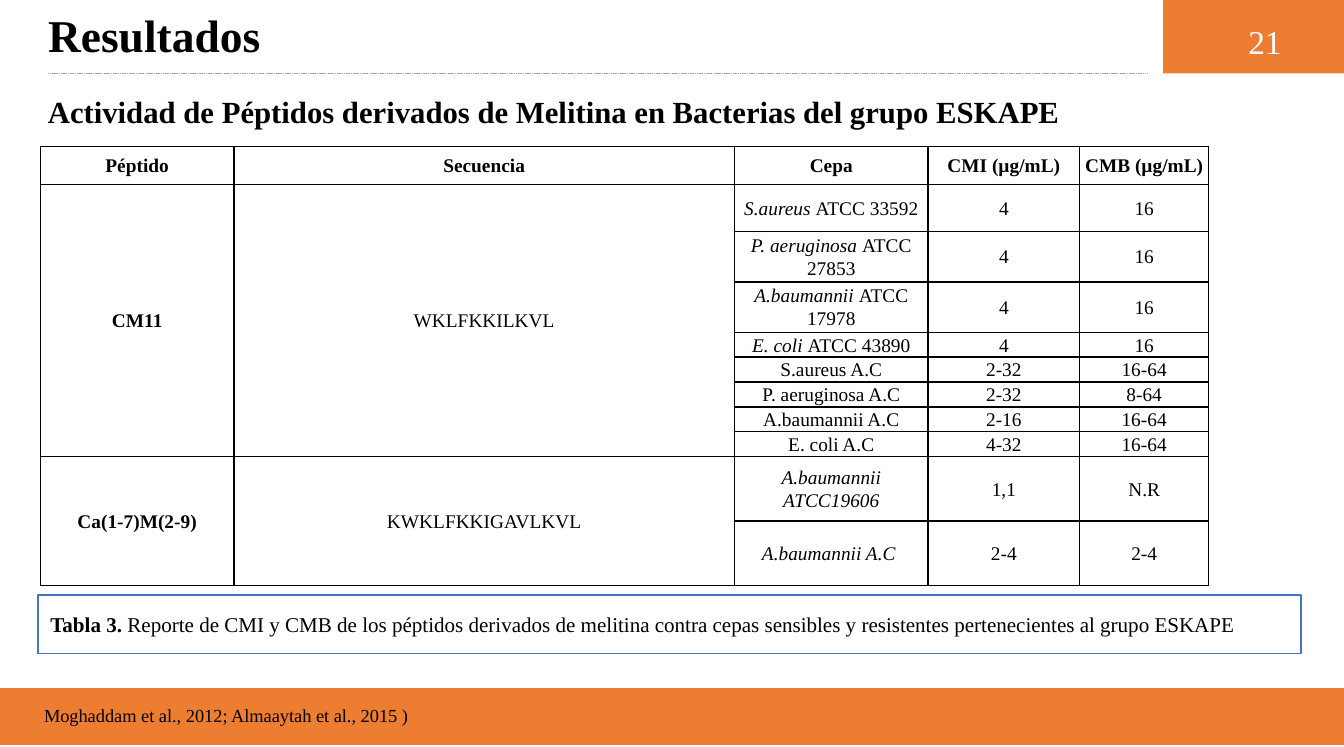
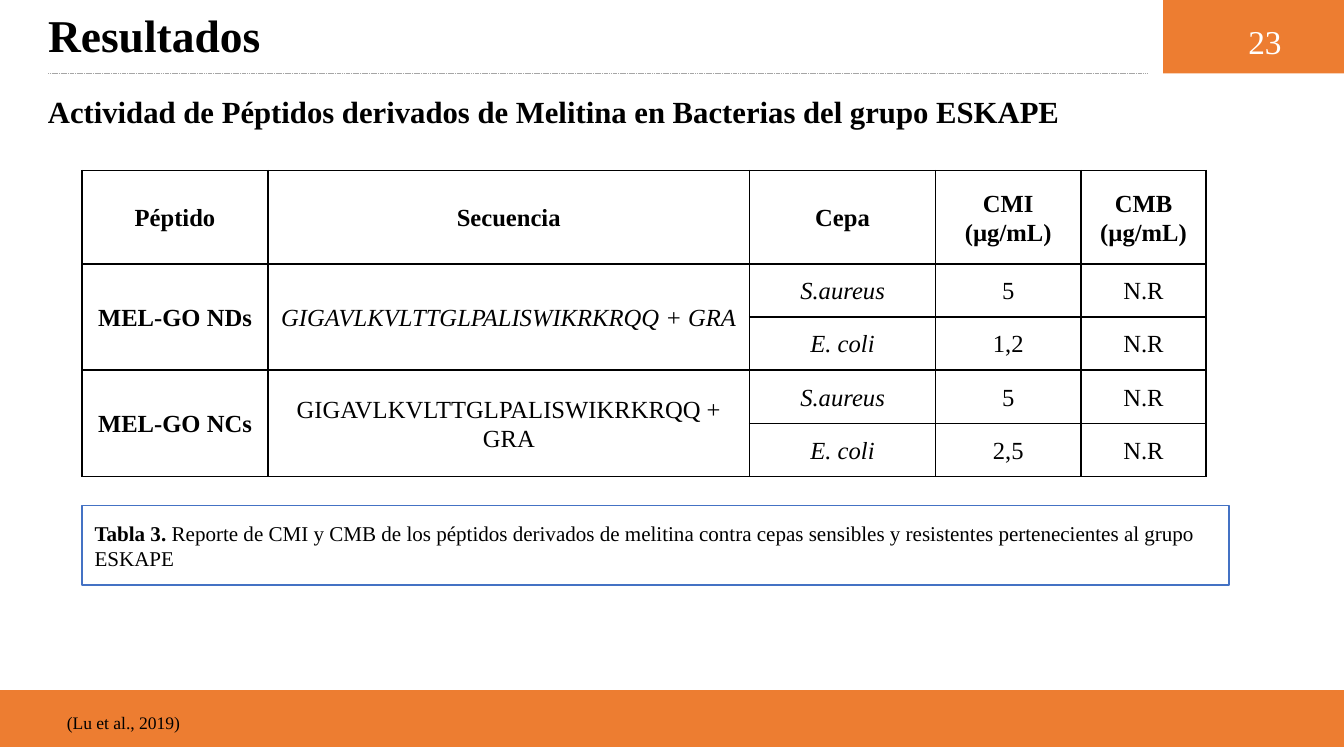
from dataclasses import dataclass
from typing import NamedTuple

from lxml.etree import SubElement
from pptx import Presentation
from pptx.dml.color import RGBColor
from pptx.enum.dml import MSO_LINE
from pptx.enum.shapes import MSO_CONNECTOR, MSO_SHAPE
from pptx.enum.text import MSO_ANCHOR, MSO_AUTO_SIZE, PP_ALIGN
from pptx.oxml.ns import qn
from pptx.util import Inches, Pt

FONT = "Times New Roman"
BLACK, WHITE, ORANGE, BLUE, GRAY = "000000", "FFFFFF", "ED7D31", "4472C4", "A6A6A6"
SLIDE_WIDTH, SLIDE_HEIGHT, BAND_HEIGHT = 10.63, 5.91, 0.44
HEADER_HEIGHT = 0.58
TITLE = "Resultados"
SUBTITLE = "Actividad de Péptidos derivados de Melitina en Bacterias del grupo ESKAPE"
HEADINGS = ("Péptido", "Secuencia", "Cepa", "CMI (µg/mL)", "CMB (µg/mL)")
CAPTION_LABEL = "Tabla 3."
CAPTION = (" Reporte de CMI y CMB de los péptidos derivados de melitina contra cepas "
           "sensibles y resistentes pertenecientes al grupo ESKAPE")


class Box(NamedTuple):
    """Left, top, width and height in inches."""
    left: float
    top: float
    width: float
    height: float

    def lengths(self):
        """Return the four values as lengths."""
        return tuple(Inches(value) for value in self)


class Run(NamedTuple):
    """A piece of text with one style."""
    text: str
    bold: bool = False
    italic: bool = False


class Strain(NamedTuple):
    """A strain, with italics between asterisks, and its concentrations."""
    name: str
    cmi: str
    cmb: str


@dataclass
class Peptide:
    """A peptide and the strains it was tested on."""
    name: str
    sequence: str
    strains: list[Strain]
    inset: float


@dataclass
class ResultTable:
    """Layout and content of a table of results."""
    left: float
    top: float
    columns: list[float]
    rows: list[float]
    size: float
    peptides: list[Peptide]


@dataclass
class ResultSlide:
    """Everything that differs between the slides."""
    number: int
    table: ResultTable
    caption: Box
    band_top: float
    citation: str
    citation_box: Box
    citation_size: float


def color(value: str) -> RGBColor:
    """Turn a hex string into a colour."""
    return RGBColor.from_string(value)


def italic_runs(text: str, bold: bool = False) -> list[Run]:
    """Split text into runs, with italics between asterisks."""
    return [Run(part, bold, index % 2 == 1)
            for index, part in enumerate(text.split("*")) if part]


def write(paragraph, runs: list[Run], size: float, font_color: str = BLACK) -> None:
    """Fill a paragraph with styled runs."""
    for item in runs:
        run = paragraph.add_run()
        run.text = item.text
        run.font.name = FONT
        run.font.size = Pt(size)
        run.font.bold = item.bold
        run.font.italic = item.italic
        run.font.color.rgb = color(font_color)


def add_text(slide, box: Box, runs: list[Run], size: float, font_color: str = BLACK):
    """Add a wrapped text box and return it."""
    shape = slide.shapes.add_textbox(*box.lengths())
    shape.text_frame.word_wrap = True
    write(shape.text_frame.paragraphs[0], runs, size, font_color)
    return shape


def add_panel(slide, box: Box, fill: str, line: str | None = None,
              preset: MSO_SHAPE = MSO_SHAPE.RECTANGLE):
    """Add a filled shape, outlined if a line colour is given."""
    shape = slide.shapes.add_shape(preset, *box.lengths())
    shape.shadow.inherit = False
    shape.fill.solid()
    shape.fill.fore_color.rgb = color(fill)
    if line:
        shape.line.color.rgb = color(line)
        shape.line.width = Pt(1)
    else:
        shape.line.fill.background()
    return shape


def add_header(slide, number: int) -> None:
    """Add the rule, number block, title and subtitle."""
    rule = slide.shapes.add_connector(
        MSO_CONNECTOR.STRAIGHT, Inches(0.38), Inches(HEADER_HEIGHT),
        Inches(9.08), Inches(HEADER_HEIGHT))
    rule.line.color.rgb = color(GRAY)
    rule.line.width = Pt(0.25)
    rule.line.dash_style = MSO_LINE.SQUARE_DOT
    SubElement(rule._element.spPr, qn("a:effectLst"))
    add_panel(slide, Box(9.2, 0, 1.43, HEADER_HEIGHT), ORANGE)

    title = slide.shapes.title
    title.left, title.top, title.width, title.height = Box(0.28, 0.09, 8.49, 0.45).lengths()
    title.text_frame.word_wrap = True
    title.text_frame.auto_size = MSO_AUTO_SIZE.NONE
    write(title.text_frame.paragraphs[0], [Run(TITLE, bold=True)], 25.9)
    subtitle = add_text(slide, Box(0.28, 0.69, 8.49, 0.45), [Run(SUBTITLE, bold=True)], 17.5)
    for shape, spacing in ((title, 0.8), (subtitle, 0.7)):
        shape.text_frame.vertical_anchor = MSO_ANCHOR.MIDDLE
        shape.text_frame.paragraphs[0].alignment = PP_ALIGN.LEFT
        shape.text_frame.paragraphs[0].line_spacing = spacing

    number_box = add_text(slide, Box(9.73, 0.12, 0.55, 0.42), [Run(str(number))], 19, WHITE)
    number_box.text_frame.paragraphs[0].alignment = PP_ALIGN.CENTER


def add_caption(slide, box: Box) -> None:
    """Add the outlined table caption."""
    caption = add_panel(slide, box, WHITE, BLUE, MSO_SHAPE.ROUNDED_RECTANGLE)
    caption.adjustments[0] = 0
    caption.text_frame.word_wrap = True
    caption.text_frame.vertical_anchor = MSO_ANCHOR.MIDDLE
    paragraph = caption.text_frame.paragraphs[0]
    paragraph.alignment = PP_ALIGN.LEFT
    write(paragraph, [Run(CAPTION_LABEL, bold=True), Run(CAPTION)], 12)


def style_cell(cell) -> None:
    """Give a cell black borders and a white fill."""
    properties = cell._tc.get_or_add_tcPr()
    for side in ("a:lnL", "a:lnR", "a:lnT", "a:lnB"):
        border = SubElement(properties, qn(side), w=str(Pt(1)))
        fill = SubElement(border, qn("a:solidFill"))
        SubElement(fill, qn("a:srgbClr"), val=BLACK)
    cell.fill.solid()
    cell.fill.fore_color.rgb = color(WHITE)


def fill_cell(cell, text: str, size: float, inset: float, bold: bool = False) -> None:
    """Write centred text into a cell."""
    cell.vertical_anchor = MSO_ANCHOR.MIDDLE
    cell.margin_left = cell.margin_right = Inches(inset)
    cell.margin_top = cell.margin_bottom = 0
    paragraph = cell.text_frame.paragraphs[0]
    paragraph.alignment = PP_ALIGN.CENTER
    paragraph.line_spacing = 1.07
    paragraph.space_after = Pt(8)
    write(paragraph, italic_runs(text, bold), size)


def add_results(slide, results: ResultTable) -> None:
    """Add the table, merging the cells of each peptide."""
    box = Box(results.left, results.top, sum(results.columns), sum(results.rows))
    table = slide.shapes.add_table(
        len(results.rows), len(results.columns), *box.lengths()).table
    table.first_row = table.horz_banding = False
    for column, width in zip(table.columns, results.columns):
        column.width = Inches(width)
    for row, height in zip(table.rows, results.rows):
        row.height = Inches(height)
    for cell in table.iter_cells():
        style_cell(cell)

    for column, heading in enumerate(HEADINGS):
        fill_cell(table.cell(0, column), heading, results.size,
                  results.peptides[0].inset, bold=True)
    first = 1
    for peptide in results.peptides:
        last = first + len(peptide.strains) - 1
        for column, text in enumerate((peptide.name, peptide.sequence)):
            table.cell(first, column).merge(table.cell(last, column))
            fill_cell(table.cell(first, column), text, results.size,
                      peptide.inset, bold=column == 0)
        for row, strain in enumerate(peptide.strains, first):
            for column, text in enumerate(strain, 2):
                fill_cell(table.cell(row, column), text, results.size, peptide.inset)
        first = last + 1


def add_result_slide(presentation, content: ResultSlide) -> None:
    """Build one slide of results."""
    slide = presentation.slides.add_slide(presentation.slide_layouts[5])
    add_header(slide, content.number)
    add_caption(slide, content.caption)
    add_results(slide, content.table)
    add_panel(slide, Box(0, content.band_top, SLIDE_WIDTH, BAND_HEIGHT), ORANGE, ORANGE)
    add_text(slide, content.citation_box, [Run(content.citation)], content.citation_size)


SLIDES = [
    ResultSlide(
        number=21,
        table=ResultTable(
            left=0.32, top=1.16, columns=[1.53, 3.96, 1.53, 1.2, 1.02],
            rows=[0.3, 0.37, 0.4, 0.4, *[0.19] * 4, 0.18, 0.51, 0.51], size=11,
            peptides=[
                Peptide("CM11", "WKLFKKILKVL", [
                    Strain("*S.aureus *ATCC 33592", "4", "16"),
                    Strain("*P. aeruginosa *ATCC 27853", "4", "16"),
                    Strain("*A.baumannii *ATCC 17978", "4", "16"),
                    Strain("*E. coli *ATCC 43890", "4", "16"),
                    Strain("S.aureus A.C", "2-32", "16-64"),
                    Strain("P. aeruginosa A.C", "2-32", "8-64"),
                    Strain("A.baumannii A.C", "2-16", "16-64"),
                    Strain("E. coli A.C", "4-32", "16-64"),
                ], inset=0.02),
                Peptide("Ca(1-7)M(2-9)", "KWKLFKKIGAVLKVL", [
                    Strain("*A.baumannii ATCC19606*", "1,1", "N.R"),
                    Strain("*A.baumannii A.C *", "2-4", "2-4"),
                ], inset=0.04),
            ]),
        caption=Box(0.3, 4.71, 9.99, 0.46),
        band_top=5.45,
        citation="Moghaddam et al., 2012; Almaaytah et al., 2015 )",
        citation_box=Box(0.25, 5.52, 5.33, 0.28),
        citation_size=10.5),
    ResultSlide(
        number=23,
        table=ResultTable(
            left=0.65, top=1.35, columns=[1.47, 3.81, 1.47, 1.15, 0.99],
            rows=[0.74, *[0.42] * 4], size=14,
            peptides=[
                Peptide("MEL-GO NDs", "*GIGAVLKVLTTGLPALISWIKRKRQQ + GRA*", [
                    Strain("*S.aureus*", "5", "N.R"),
                    Strain("*E. coli*", "1,2", "N.R"),
                ], inset=0.07),
                Peptide("MEL-GO NCs", "GIGAVLKVLTTGLPALISWIKRKRQQ + GRA", [
                    Strain("*S.aureus*", "5", "N.R"),
                    Strain("*E. coli*", "2,5", "N.R"),
                ], inset=0.07),
            ]),
        caption=Box(0.65, 4, 9.07, 0.63),
        band_top=5.47,
        citation="(Lu et al., 2019)",
        citation_box=Box(0.43, 5.58, 6.25, 0.27),
        citation_size=10),
]


def main() -> None:
    """Build and save the presentation."""
    presentation = Presentation()
    presentation.slide_width = Inches(SLIDE_WIDTH)
    presentation.slide_height = Inches(SLIDE_HEIGHT)
    for content in SLIDES:
        add_result_slide(presentation, content)
    presentation.save("out.pptx")


if __name__ == "__main__":
    main()
